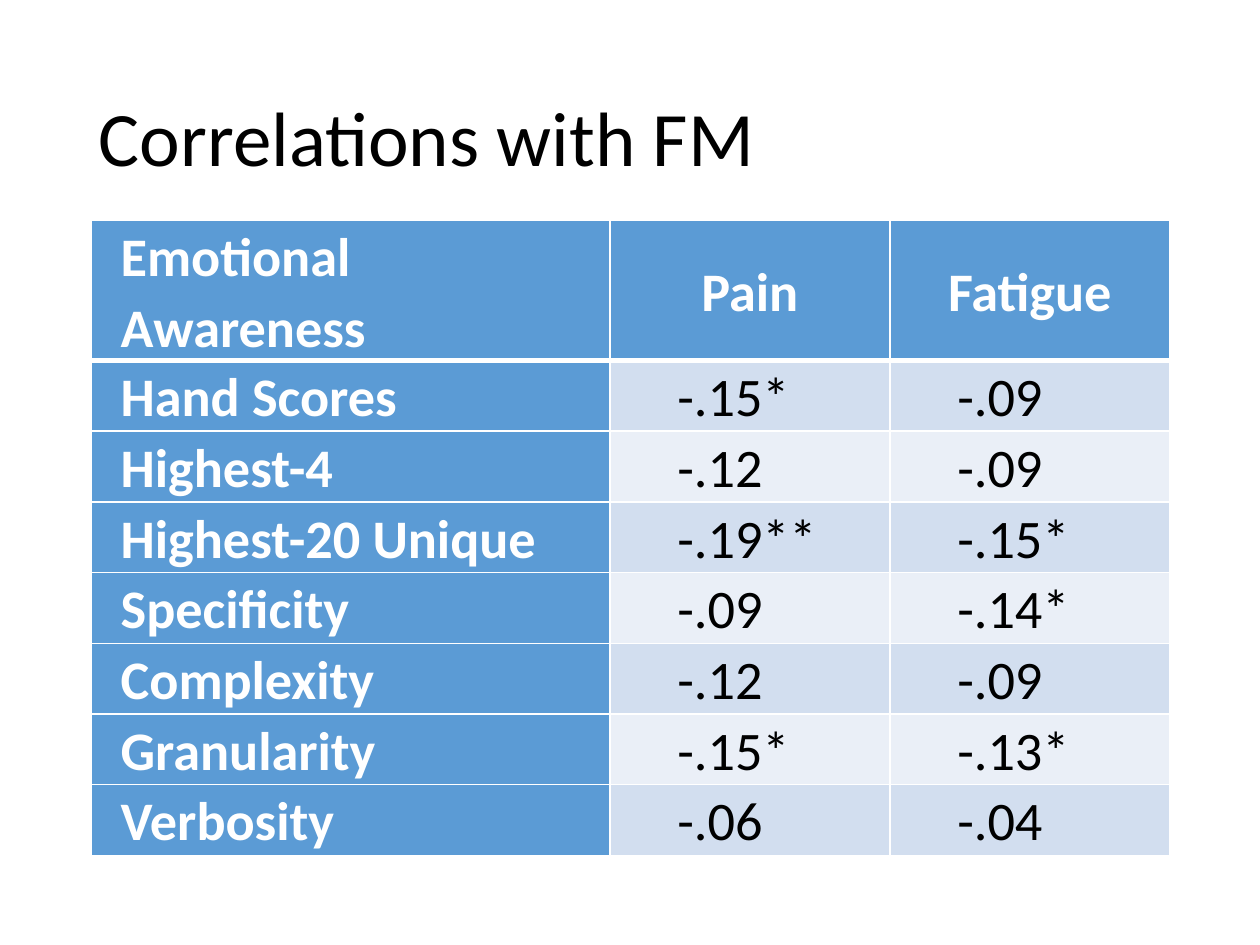
from lxml import etree
from pptx import Presentation
from pptx.dml.color import RGBColor
from pptx.enum.text import MSO_ANCHOR, PP_ALIGN
from pptx.oxml.ns import qn
from pptx.util import Pt

MIDDLE, TOP = MSO_ANCHOR.MIDDLE, MSO_ANCHOR.TOP
LEFT, CENTER = PP_ALIGN.LEFT, PP_ALIGN.CENTER

COLORS = {
    "text": "000000",
    "white": "FFFFFF",
    "header": "5B9BD5",
    "band_dark": "D2DEEF",
    "band_light": "EAEFF7",
}

ROWS = [
    ("Emotional Awareness", "Pain", "Fatigue"),
    ("Hand Scores", "-.15*", "-.09"),
    ("Highest-4", "-.12", "-.09"),
    ("Highest-20 Unique", "-.19**", "-.15*"),
    ("Specificity", "-.09", "-.14*"),
    ("Complexity", "-.12", "-.09"),
    ("Granularity", "-.15*", "-.13*"),
    ("Verbosity", "-.06", "-.04"),
]
COL_WIDTHS = [296.5, 160, 160]
ROW_HEIGHTS = [80] + [40.4] * 7


class SlideBuilder:
    font = "Calibri"
    title_size = 44
    table_size = 31

    def __init__(self, slide):
        self.s = slide

    def color(self, name):
        return RGBColor.from_string(COLORS[name])

    def set_text(self, tf, text, size, color, bold=False, align=LEFT, spacing=1.0):
        tf.text = text
        p = tf.paragraphs[0]
        p.alignment = align
        p.line_spacing = spacing
        font = p.runs[0].font
        font.name, font.size, font.bold = self.font, Pt(size), bold
        font.color.rgb = self.color(color)
        return p

    def title(self, text, x, y, w, h):
        tf = self.s.shapes.add_textbox(Pt(x), Pt(y), Pt(w), Pt(h)).text_frame
        tf.word_wrap = True
        tf.vertical_anchor = MIDDLE
        self.set_text(tf, text, self.title_size, "text", spacing=0.9)

    def border(self, cell, side, width):
        ln = etree.SubElement(cell._tc.get_or_add_tcPr(), qn("a:ln" + side), w=str(Pt(width)))
        fill = etree.SubElement(ln, qn("a:solidFill"))
        etree.SubElement(fill, qn("a:srgbClr"), val=COLORS["white"])

    def cell(self, cell, text, row, col):
        is_header, is_label = row == 0, col == 0
        is_value = not (is_header or is_label)
        cell.margin_left = cell.margin_right = Pt(17)
        cell.margin_top = cell.margin_bottom = 0
        cell.vertical_anchor = MIDDLE if is_header else TOP
        # The line under the header row is thicker
        widths = {"L": 1, "R": 1, "T": 3 if row == 1 else 1, "B": 3 if is_header else 1}
        for side, width in widths.items():
            self.border(cell, side, width)
        band = "band_dark" if row % 2 else "band_light"
        cell.fill.solid()
        cell.fill.fore_color.rgb = self.color(band if is_value else "header")
        p = self.set_text(cell.text_frame, text, self.table_size,
                          "text" if is_value else "white", bold=not is_value,
                          align=CENTER if is_header and not is_label else LEFT,
                          spacing=1.07)
        if is_value:
            pPr = p._p.get_or_add_pPr()
            pPr.set("marL", str(Pt(21.6)))
            pPr.set("indent", "0")

    def table(self, rows, x, y, col_widths, row_heights):
        table = self.s.shapes.add_table(
            len(rows), len(col_widths), Pt(x), Pt(y),
            Pt(sum(col_widths)), Pt(sum(row_heights))).table
        for column, width in zip(table.columns, col_widths):
            column.width = Pt(width)
        for r, (values, height) in enumerate(zip(rows, row_heights)):
            table.rows[r].height = Pt(height)
            for c, text in enumerate(values):
                self.cell(table.cell(r, c), text, r, c)


def main():
    prs = Presentation()
    prs.slide_width, prs.slide_height = Pt(720), Pt(540)
    builder = SlideBuilder(prs.slides.add_slide(prs.slide_layouts[6]))

    # Title
    builder.title("Correlations with FM", 49.5, 28.8, 621, 104.4)

    # Correlation table
    builder.table(ROWS, 52, 126, COL_WIDTHS, ROW_HEIGHTS)

    prs.save("out.pptx")


if __name__ == "__main__":
    main()
